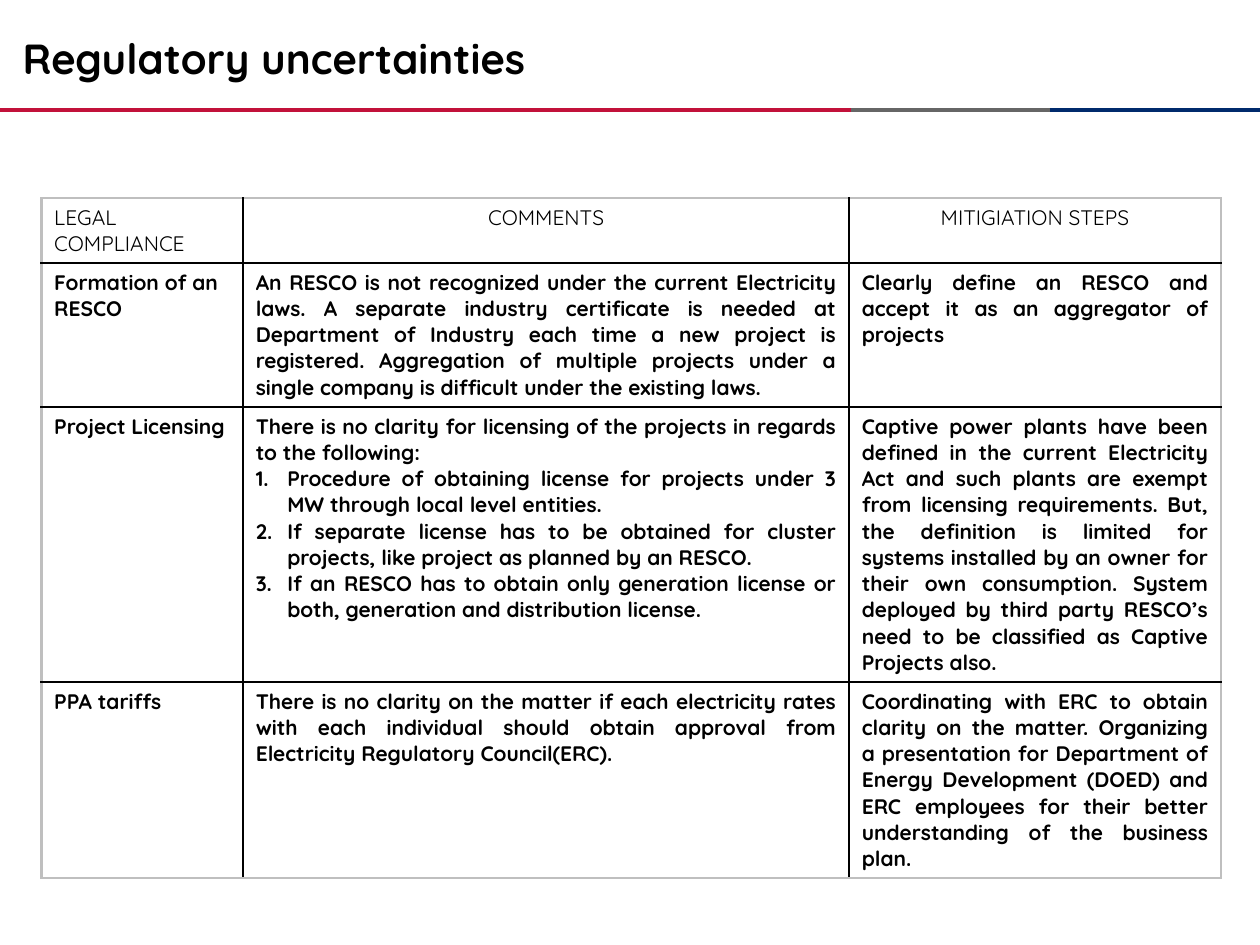
from dataclasses import dataclass

from lxml import etree
from pptx import Presentation
from pptx import util as u
from pptx.dml.color import RGBColor
from pptx.enum import shapes, text
from pptx.oxml.ns import qn


@dataclass(frozen=True)
class Theme:
    font: str = "Quicksand"
    ink: str = "000000"
    red: str = "C2113A"
    gray: str = "666666"
    navy: str = "002A6C"
    frame: str = "BFBFBF"
    title_size: int = 24
    body_size: int = 12
    rule_width: float = 2.25


LEFT, CENTER, JUSTIFY = (
    text.PP_ALIGN.LEFT, text.PP_ALIGN.CENTER, text.PP_ALIGN.JUSTIFY)


class SlideBuilder:
    def __init__(self, slide, theme):
        self.slide = slide
        self.theme = theme

    def add_run(self, paragraph, words, size, bold):
        run = paragraph.add_run()
        run.text = words
        run.font.name = self.theme.font
        run.font.size = u.Pt(size)
        run.font.bold = bold
        run.font.color.rgb = RGBColor.from_string(self.theme.ink)

    def title(self, words, left, top, width, height):
        shape = self.slide.shapes.title
        shape.left, shape.top = u.Inches(left), u.Inches(top)
        shape.width, shape.height = u.Inches(width), u.Inches(height)
        frame = shape.text_frame
        frame.word_wrap = True
        frame.auto_size = text.MSO_AUTO_SIZE.NONE
        frame.vertical_anchor = text.MSO_ANCHOR.MIDDLE
        paragraph = frame.paragraphs[0]
        paragraph.alignment = LEFT
        self.add_run(paragraph, words, self.theme.title_size, True)

    def rule(self, start, end, y, color):
        line = self.slide.shapes.add_connector(
            shapes.MSO_CONNECTOR.STRAIGHT,
            u.Inches(start), u.Inches(y), u.Inches(end), u.Inches(y))
        line.line.color.rgb = RGBColor.from_string(color)
        line.line.width = u.Pt(self.theme.rule_width)
        etree.SubElement(line._element.spPr, qn("a:effectLst"))

    def number(self, paragraph):
        properties = paragraph._p.get_or_add_pPr()
        properties.set("marL", str(u.Inches(0.25)))
        properties.set("indent", str(-u.Inches(0.25)))
        etree.SubElement(properties, qn("a:buFont"), typeface="+mj-lt")
        etree.SubElement(properties, qn("a:buAutoNum"), type="arabicPeriod")

    def border(self, cell, side, color, width):
        properties = cell._tc.get_or_add_tcPr()
        line = etree.SubElement(properties, qn(f"a:{side}"), w=str(u.Pt(width)))
        fill = etree.SubElement(line, qn("a:solidFill"))
        etree.SubElement(fill, qn("a:srgbClr"), val=color)

    def cell(self, cell, paragraphs, alignment, bold, outer_sides):
        for side in ("lnL", "lnR", "lnT", "lnB"):
            color = self.theme.frame if side in outer_sides else self.theme.ink
            self.border(cell, side, color, 1.5 if side in ("lnL", "lnR") else 1)
        cell.fill.background()
        frame = cell.text_frame
        # Paragraphs after the first are the numbered points
        for index, words in enumerate(paragraphs):
            paragraph = frame.add_paragraph() if index else frame.paragraphs[0]
            paragraph.alignment = alignment
            if index:
                self.number(paragraph)
            self.add_run(paragraph, words, self.theme.body_size, bold)

    def table(self, rows, left, top, widths, heights):
        table = self.slide.shapes.add_table(
            len(rows), len(widths), u.Inches(left), u.Inches(top),
            u.Inches(sum(widths)), u.Inches(sum(heights))).table
        table.first_row = table.horz_banding = False
        for column, width in zip(table.columns, widths):
            column.width = u.Inches(width)
        for row, height in zip(table.rows, heights):
            row.height = u.Inches(height)
        last_row, last_column = len(rows) - 1, len(widths) - 1
        for r, row in enumerate(rows):
            for c, paragraphs in enumerate(row):
                edges = {"lnL": c == 0, "lnR": c == last_column,
                         "lnT": r == 0, "lnB": r == last_row}
                outer_sides = [side for side, outer in edges.items() if outer]
                alignment = LEFT if c == 0 else JUSTIFY if r else CENTER
                self.cell(table.cell(r, c), paragraphs, alignment, r > 0, outer_sides)


# Each cell is a list of paragraphs
ROWS = [
    [["LEGAL COMPLIANCE"], ["COMMENTS"], ["MITIGIATION STEPS"]],
    [["Formation of an RESCO"],
     ["An RESCO is not recognized under the current Electricity laws. A separate "
      "industry certificate is needed at Department of Industry each time a new "
      "project is registered. Aggregation of multiple projects under a single "
      "company is difficult under the existing laws."],
     ["Clearly define an RESCO and accept it as an aggregator of projects"]],
    [["Project Licensing"],
     ["There is no clarity for licensing of the projects in regards to the following:",
      "Procedure of obtaining license for projects under 3 MW through local level "
      "entities.",
      "If separate license has to be obtained for cluster projects, like project as "
      "planned by an RESCO.",
      "If an RESCO has to obtain only generation license or both, generation and "
      "distribution license."],
     ["Captive power plants have been defined in the current Electricity Act and "
      "such plants are exempt from licensing requirements. But, the definition is "
      "limited for systems installed by an owner for their own consumption. System "
      "deployed by third party RESCO’s need to be classified as Captive Projects "
      "also."]],
    [["PPA tariffs"],
     ["There is no clarity on the matter if each electricity rates with each "
      "individual should obtain approval from Electricity Regulatory Council(ERC)."],
     ["Coordinating with ERC to obtain clarity on the matter. Organizing a "
      "presentation for Department of Energy Development (DOED) and ERC employees "
      "for their better understanding of the business plan."]],
]


def main():
    presentation = Presentation()
    presentation.slide_width, presentation.slide_height = u.Inches(10), u.Inches(7.5)
    theme = Theme()
    slide = presentation.slides.add_slide(presentation.slide_layouts[5])
    builder = SlideBuilder(slide, theme)

    # Heading and three-colour rule
    builder.title("Regulatory uncertainties", 0.08, 0.17, 9.5, 0.58)
    for start, end, color in ((0, 6.75, theme.red), (6.75, 8.33, theme.gray),
                              (8.33, 10, theme.navy)):
        builder.rule(start, end, 0.87, color)

    # Compliance table
    builder.table(ROWS, 0.33, 1.57, (1.6, 4.81, 2.95), (0.4, 1.1, 1.83, 1.34))
    presentation.save("out.pptx")


if __name__ == "__main__":
    main()
